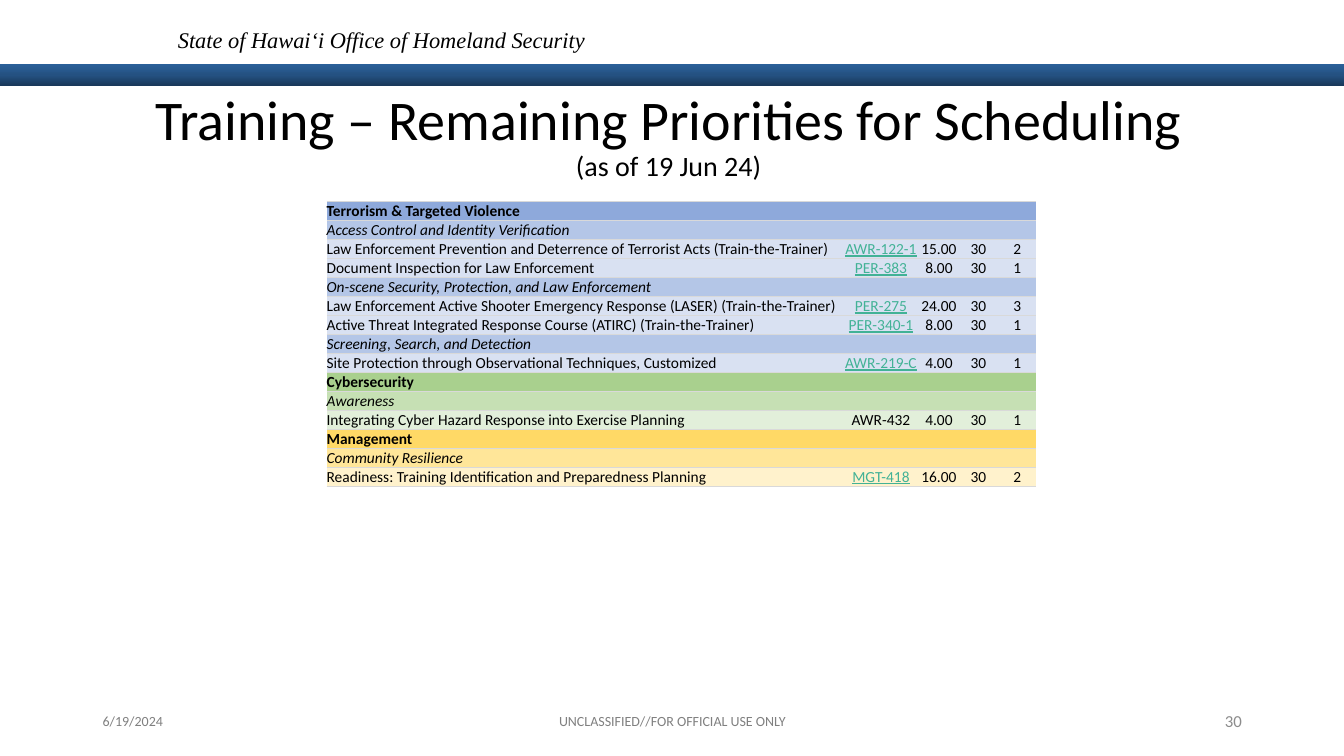
from copy import deepcopy
from dataclasses import dataclass

from pptx import Presentation
from pptx.dml.color import RGBColor
from pptx.enum.shapes import MSO_SHAPE
from pptx.enum.text import MSO_ANCHOR, PP_ALIGN
from pptx.oxml import parse_xml
from pptx.oxml.ns import nsdecls, qn
from pptx.util import Inches, Pt


@dataclass(frozen=True)
class Theme:
    body_font: str = "Calibri"
    header_font: str = "Times New Roman"
    ink: str = "000000"
    footer: str = "808080"
    page: str = "8C8C8C"
    link: str = "42B296"
    rule: str = "D9D9D9"
    bar: tuple = ("19395B", "245181", "2B6099")
    title_size: int = 40
    date_size: int = 20
    header_size: int = 16
    page_size: int = 12
    table_size: int = 11
    footer_size: int = 10


THEME = Theme()
LEFT, CENTER, RIGHT = PP_ALIGN.LEFT, PP_ALIGN.CENTER, PP_ALIGN.RIGHT

# Fills of each topic: heading, subheading, course
BLUE = ("8EA9DB", "B4C6E7", "D9E1F2")
GREEN = ("A9D08E", "C6E0B4", "E2EFDA")
GOLD = ("FFD966", "FFE699", "FFF2CC")

# Topic, fills, and {subheading: [(course, code, hours, seats, days)]}
TOPICS = [
    ("Terrorism & Targeted Violence", BLUE, {
        "Access Control and Identity Verification": [
            ("Law Enforcement Prevention and Deterrence of Terrorist Acts (Train-the-Trainer)",
             "AWR-122-1", "15.00", "30", "2"),
            ("Document Inspection for Law Enforcement", "PER-383", "8.00", "30", "1"),
        ],
        "On-scene Security, Protection, and Law Enforcement": [
            ("Law Enforcement Active Shooter Emergency Response (LASER) (Train-the-Trainer)",
             "PER-275", "24.00", "30", "3"),
            ("Active Threat Integrated Response Course (ATIRC) (Train-the-Trainer)",
             "PER-340-1", "8.00", "30", "1"),
        ],
        "Screening, Search, and Detection": [
            ("Site Protection through Observational Techniques, Customized",
             "AWR-219-C", "4.00", "30", "1"),
        ],
    }),
    ("Cybersecurity", GREEN, {
        "Awareness": [
            ("Integrating Cyber Hazard Response into Exercise Planning",
             "AWR-432", "4.00", "30", "1"),
        ],
    }),
    ("Management", GOLD, {
        "Community Resilience": [
            ("Readiness: Training Identification and Preparedness Planning",
             "MGT-418", "16.00", "30", "2"),
        ],
    }),
]
UNLINKED = {"AWR-432"}
COLUMN_SHARES = (38.4, 5.7, 2.93, 2.93, 2.85)
ROW_SHARE = 2.51


def write(p, text, size, font=THEME.body_font, color=THEME.ink, align=LEFT,
          spacing=None, bold=False, italic=False, underline=False):
    p.alignment = align
    if spacing:
        p.line_spacing = spacing
    r = p.add_run()
    r.text = text
    r.font.name, r.font.size = font, Pt(size)
    r.font.color.rgb = RGBColor.from_string(color)
    r.font.bold, r.font.italic, r.font.underline = bold, italic, underline


def table_rows():
    """Yield the texts, fill and first-column format of every table row."""
    for topic, (heading, subheading, course), groups in TOPICS:
        yield (topic,), heading, {"bold": True}
        for group, courses in groups.items():
            yield (group,), subheading, {"italic": True}
            for texts in courses:
                yield texts, course, {}


class SlideBuilder:
    """Draws on one slide; lengths are percent of the slide's width and height."""

    def __init__(self, prs, theme):
        self.prs, self.theme = prs, theme
        self.slide = prs.slides.add_slide(prs.slide_layouts[6])

    def x(self, share):
        return round(self.prs.slide_width * share / 100)

    def y(self, share):
        return round(self.prs.slide_height * share / 100)

    def box(self, left, top, width, height):
        return self.x(left), self.y(top), self.x(width), self.y(height)

    def bar(self, *place):
        s = self.slide.shapes.add_shape(MSO_SHAPE.RECTANGLE, *self.box(*place))
        s.shadow.inherit = False
        s.line.fill.background()
        s.fill.gradient()
        s.fill.gradient_angle = 90
        stops = s._element.spPr.find(".//" + qn("a:gsLst"))
        stops.insert(1, deepcopy(stops[0]))
        for i, (stop, color) in enumerate(zip(s.fill.gradient_stops, self.theme.bar)):
            stop.position = i / 2
            stop.color.rgb = RGBColor.from_string(color)

    def text(self, place, *lines, anchor=MSO_ANCHOR.TOP, **fmt):
        """Add a text box; each line is a (text, size) pair."""
        tf = self.slide.shapes.add_textbox(*self.box(*place)).text_frame
        tf.word_wrap = True
        tf.vertical_anchor = anchor
        for i, (text, size) in enumerate(lines):
            p = tf.add_paragraph() if i else tf.paragraphs[0]
            write(p, text, size, **fmt)

    def footer(self, left, width, text, size, **fmt):
        self.text((left, 92.67, width, 5.33), (text, size),
                  anchor=MSO_ANCHOR.MIDDLE, **fmt)

    def cell(self, cell, fill):
        """Style a cell: no margins, thin rules above and below, plain fill."""
        cell.margin_left = cell.margin_right = cell.margin_top = cell.margin_bottom = 0
        tc_pr = cell._tc.get_or_add_tcPr()
        for side in ("lnL", "lnR", "lnT", "lnB"):
            paint = ("<a:noFill/>" if side in ("lnL", "lnR") else
                     f'<a:solidFill><a:srgbClr val="{self.theme.rule}"/></a:solidFill>')
            tc_pr.append(parse_xml(
                f'<a:{side} {nsdecls("a")} w="{Pt(1)}">{paint}</a:{side}>'))
        cell.fill.solid()
        cell.fill.fore_color.rgb = RGBColor.from_string(fill)

    def course_table(self, left, top):
        rows, size = list(table_rows()), self.theme.table_size
        place = self.box(left, top, sum(COLUMN_SHARES), ROW_SHARE * len(rows))
        table = self.slide.shapes.add_table(len(rows), len(COLUMN_SHARES), *place).table
        table.first_row = table.horz_banding = False
        for column, share in zip(table.columns, COLUMN_SHARES):
            column.width = self.x(share)
        for row, (texts, fill, fmt) in zip(table.rows, rows):
            row.height = self.y(ROW_SHARE)
            for i, cell in enumerate(row.cells):
                self.cell(cell, fill)
                p = cell.text_frame.paragraphs[0]
                if i >= len(texts):
                    p._p.get_or_add_endParaRPr().set("sz", str(size * 100))
                    continue
                linked = i == 1 and texts[i] not in UNLINKED
                write(p, texts[i], size, align=CENTER if i else LEFT, underline=linked,
                      color=self.theme.link if linked else self.theme.ink, **fmt)


def main():
    prs = Presentation()
    prs.slide_width, prs.slide_height = Inches(13.33), Inches(7.5)
    t = THEME
    b = SlideBuilder(prs, t)
    b.bar(0, 8.53, 100, 2.8)
    b.text((12.5, 2.8, 59.7, 4.93),
           ("State of Hawai‘i Office of Homeland Security", t.header_size),
           font=t.header_font, italic=True)
    b.footer(70.65, 22.5, "30", t.page_size, color=t.page, align=RIGHT)
    b.footer(6.9, 22.5, "6/19/2024", t.footer_size, color=t.footer)
    b.footer(33.15, 33.75, "UNCLASSIFIED//FOR OFFICIAL USE ONLY", t.footer_size,
             color=t.footer, align=CENTER)
    b.text((0, 11.47, 99.5, 8.27),
           ("Training – Remaining Priorities for Scheduling", t.title_size),
           ("(as of 19 Jun 24)", t.date_size), align=CENTER, spacing=0.9)
    b.course_table(24.3, 26.67)
    prs.save("out.pptx")


if __name__ == "__main__":
    main()
